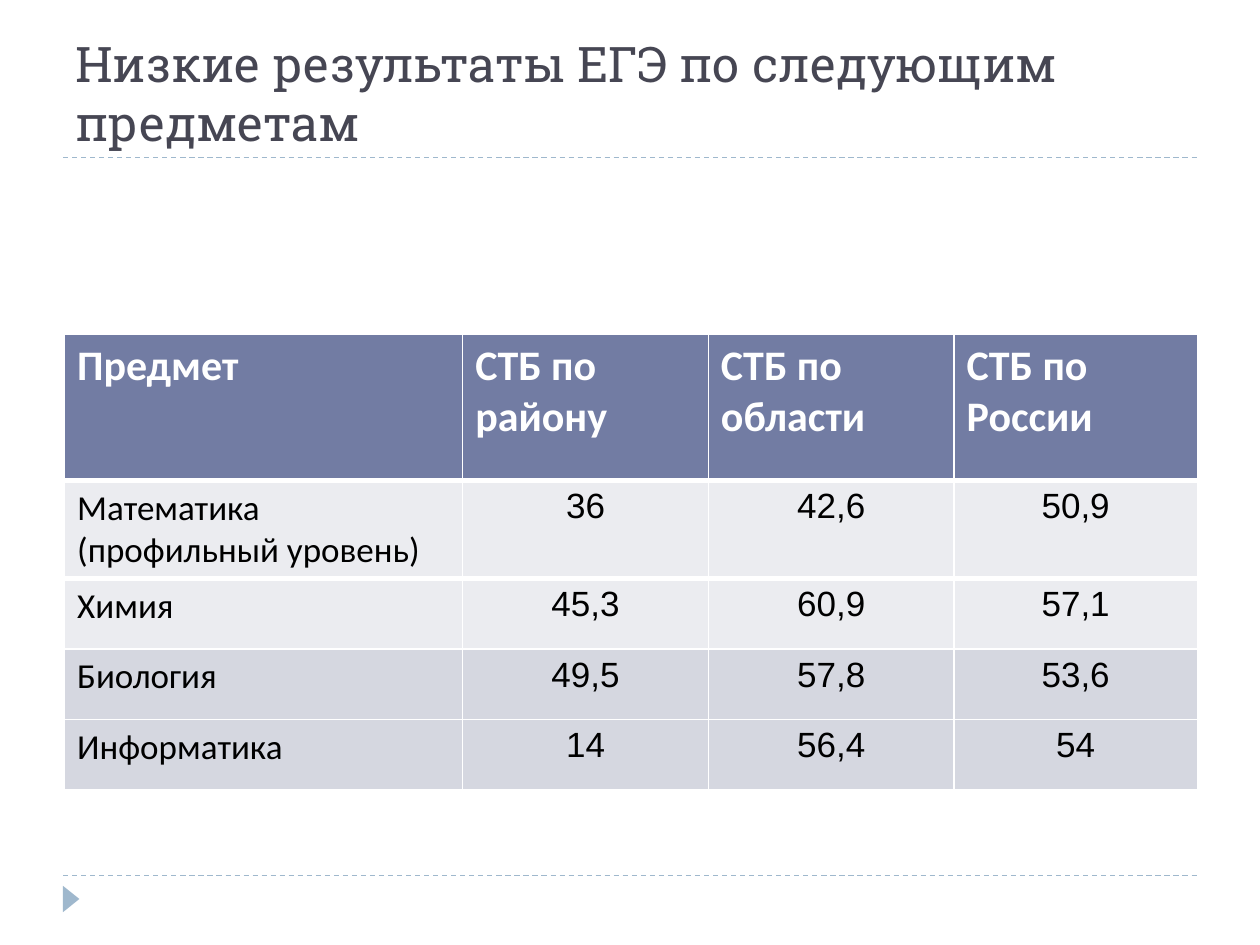
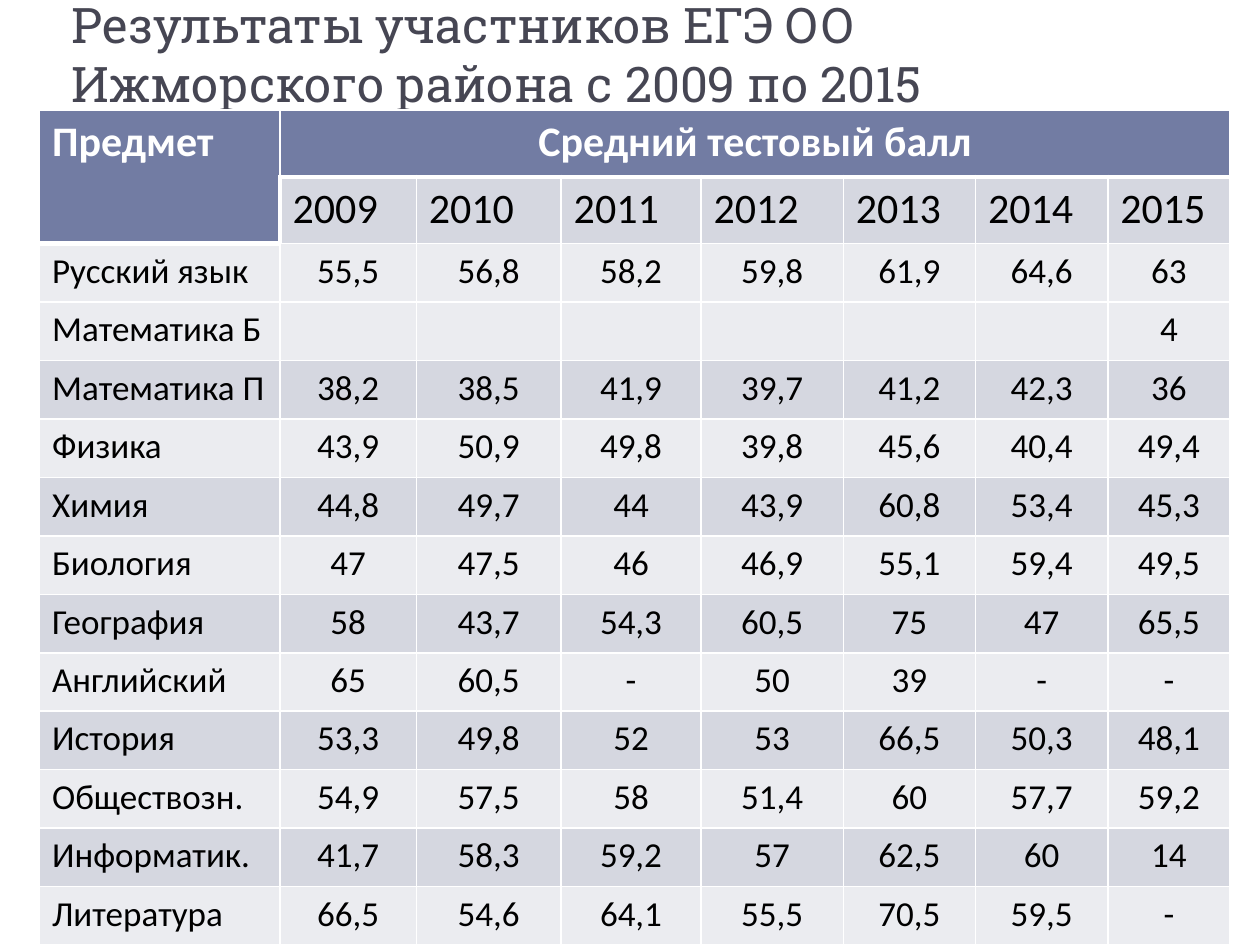
from collections import namedtuple

from lxml import etree
from pptx import Presentation
from pptx.dml.color import RGBColor
from pptx.enum import dml, shapes, text
from pptx.oxml import ns
from pptx.util import Pt

Box = namedtuple("Box", "left top width height")

COLORS = {
    "title": "464653",
    "accent": "9FB8CD",
    "header": "727CA3",
    "light": "EBECF0",
    "dark": "D5D7E0",
    "white": "FFFFFF",
    "black": "000000",
}
TITLE_FONT, BODY_FONT, NUMBER_FONT = "Roboto Slab", "Calibri", "Arial"
FRAME = Box(36, 90, 648, 410.4)
THIN, HEAVY = 1, 3

LOW_RESULTS = [
    ["Предмет", "СТБ по району", "СТБ по области", "СТБ по России"],
    ["Математика (профильный уровень)", "36", "42,6", "50,9"],
    ["Химия", "45,3", "60,9", "57,1"],
    ["Биология", "49,5", "57,8", "53,6"],
    ["Информатика", "14", "56,4", "54"],
]
YEARS = [str(year) for year in range(2009, 2016)]
YEARLY_SCORES = [
    ["Русский язык", "55,5", "56,8", "58,2", "59,8", "61,9", "64,6", "63"],
    ["Математика Б", "", "", "", "", "", "", "4"],
    ["Математика П", "38,2", "38,5", "41,9", "39,7", "41,2", "42,3", "36"],
    ["Физика", "43,9", "50,9", "49,8", "39,8", "45,6", "40,4", "49,4"],
    ["Химия", "44,8", "49,7", "44", "43,9", "60,8", "53,4", "45,3"],
    ["Биология", "47", "47,5", "46", "46,9", "55,1", "59,4", "49,5"],
    ["География", "58", "43,7", "54,3", "60,5", "75", "47", "65,5"],
    ["Английский", "65", "60,5", "-", "50", "39", "-", "-"],
    ["История", "53,3", "49,8", "52", "53", "66,5", "50,3", "48,1"],
    ["Обществозн.", "54,9", "57,5", "58", "51,4", "60", "57,7", "59,2"],
    ["Информатик.", "41,7", "58,3", "59,2", "57", "62,5", "60", "14"],
    ["Литература", "66,5", "54,6", "64,1", "55,5", "70,5", "59,5", "-"],
]


def rgb(name):
    return RGBColor.from_string(COLORS[name])


def format_runs(paragraph, font, size, color, bold=False):
    for run in paragraph.runs:
        run.font.name = font
        run.font.size = Pt(size)
        run.font.bold = bold
        run.font.color.rgb = rgb(color)


def add_frame(slide, box):
    """Dashed rules above and below the box, with a marker under its left end."""
    for y in (box.top, box.top + box.height):
        rule = slide.shapes.add_connector(
            shapes.MSO_CONNECTOR.STRAIGHT,
            Pt(box.left), Pt(y), Pt(box.left + box.width), Pt(y))
        rule.line.color.rgb = rgb("accent")
        rule.line.width = Pt(0.75)
        rule.line.dash_style = dml.MSO_LINE.DASH
        etree.SubElement(rule._element.spPr, ns.qn("a:effectLst"))
    marker = slide.shapes.add_shape(
        shapes.MSO_SHAPE.ISOSCELES_TRIANGLE,
        Pt(box.left - 2.9), Pt(box.top + box.height + 8.6), Pt(15.1), Pt(9.4))
    marker.rotation = 90
    marker.shadow.inherit = False
    marker.fill.solid()
    marker.fill.fore_color.rgb = rgb("accent")
    marker.line.fill.background()


def add_title(slide, box, wording):
    title = slide.shapes.add_textbox(*map(Pt, box)).text_frame
    title.word_wrap = True
    title.vertical_anchor = text.MSO_ANCHOR.BOTTOM
    title.text = wording
    format_runs(title.paragraphs[0], TITLE_FONT, 28, "title")


def set_borders(cell, left=THIN, right=THIN, top=THIN, bottom=THIN):
    properties = cell._tc.get_or_add_tcPr()
    sides = zip("LRTB", (left, right, top, bottom))
    for position, (side, width) in enumerate(sides):
        line = etree.Element(ns.qn(f"a:ln{side}"), w=str(Pt(width)))
        fill = etree.SubElement(line, ns.qn("a:solidFill"))
        etree.SubElement(fill, ns.qn("a:srgbClr"), val=COLORS["white"])
        properties.insert(position, line)


def fill_cell(cell, wording, fill, size=20, color="black", bold=False,
              font=BODY_FONT, centred=False, **borders):
    set_borders(cell, **borders)
    cell.fill.solid()
    cell.fill.fore_color.rgb = rgb(fill)
    cell.text = wording
    paragraph = cell.text_frame.paragraphs[0]
    if centred:
        paragraph.alignment = text.PP_ALIGN.CENTER
    format_runs(paragraph, font, size, color, bold)


def fill_header(cell, wording, **options):
    fill_cell(cell, wording, "header", 24, "white", True,
              bottom=HEAVY, **options)


def add_grid(slide, left, top, widths, heights):
    frame = slide.shapes.add_table(
        len(heights), len(widths), Pt(left), Pt(top),
        Pt(sum(widths)), Pt(sum(heights)))
    table = frame.table
    table.first_row = table.horz_banding = False
    for column, width in zip(table.columns, widths):
        column.width = Pt(width)
    for row, height in zip(table.rows, heights):
        row.height = Pt(height)
    return table


def add_low_results(slide, left, top):
    table = add_grid(slide, left, top, [227.5, 140.4, 140.4, 139],
                     [83.5, 56.2] + [40.3] * 3)
    for c, heading in enumerate(LOW_RESULTS[0]):
        fill_header(table.cell(0, c), heading)
    for r, scores in enumerate(LOW_RESULTS[1:], 1):
        for c, wording in enumerate(scores):
            fill_cell(table.cell(r, c), wording,
                      "light" if r < 3 else "dark",
                      font=NUMBER_FONT if c else BODY_FONT, centred=c > 0,
                      top=HEAVY if r < 3 else THIN,
                      bottom=HEAVY if r == 1 else THIN)


def add_yearly_scores(slide, left, top):
    table = add_grid(slide, left, top,
                     [137.5, 77.8, 82.8, 79.9, 81.4, 75.6, 75.6, 69.8],
                     [38.2] * 2 + [33.4] * len(YEARLY_SCORES))
    for c in range(len(YEARS) + 1):
        fill_header(table.cell(0, c), "")
    fill_header(table.cell(1, 0), "")
    for c, year in enumerate(YEARS, 1):
        fill_cell(table.cell(1, c), year, "dark", 24, top=HEAVY,
                  left=HEAVY if c == 1 else THIN)
    table.cell(0, 0).merge(table.cell(1, 0))
    table.cell(0, 1).merge(table.cell(0, len(YEARS)))
    for c, heading in enumerate(["Предмет", "Средний тестовый балл"]):
        cell = table.cell(0, c)
        cell.text = heading
        paragraph = cell.text_frame.paragraphs[0]
        format_runs(paragraph, BODY_FONT, 24, "white", True)
        if c:
            paragraph.alignment = text.PP_ALIGN.CENTER
    for r, scores in enumerate(YEARLY_SCORES):
        for c, wording in enumerate(scores):
            fill_cell(table.cell(r + 2, c), wording,
                      "dark" if r and r % 2 == 0 else "light",
                      centred=c > 0,
                      top=HEAVY if (r, c) == (0, 0) else THIN)


def add_slide(deck, title_box, title, add_scores, left, top):
    slide = deck.slides.add_slide(deck.slide_layouts[6])
    add_frame(slide, FRAME)
    add_title(slide, title_box, title)
    add_scores(slide, left, top)


def main():
    deck = Presentation()
    deck.slide_width, deck.slide_height = Pt(720), Pt(540)
    add_slide(deck, Box(36, 12.2, 648, 77.8),
              "Низкие результаты ЕГЭ по следующим предметам",
              add_low_results, 36.9, 191)
    add_slide(deck, Box(33.8, 0, 648, 67.7),
              "Результаты участников ЕГЭ ОО Ижморского района с 2009 по 2015",
              add_yearly_scores, 22.6, 62.9)
    deck.save("out.pptx")


if __name__ == "__main__":
    main()
